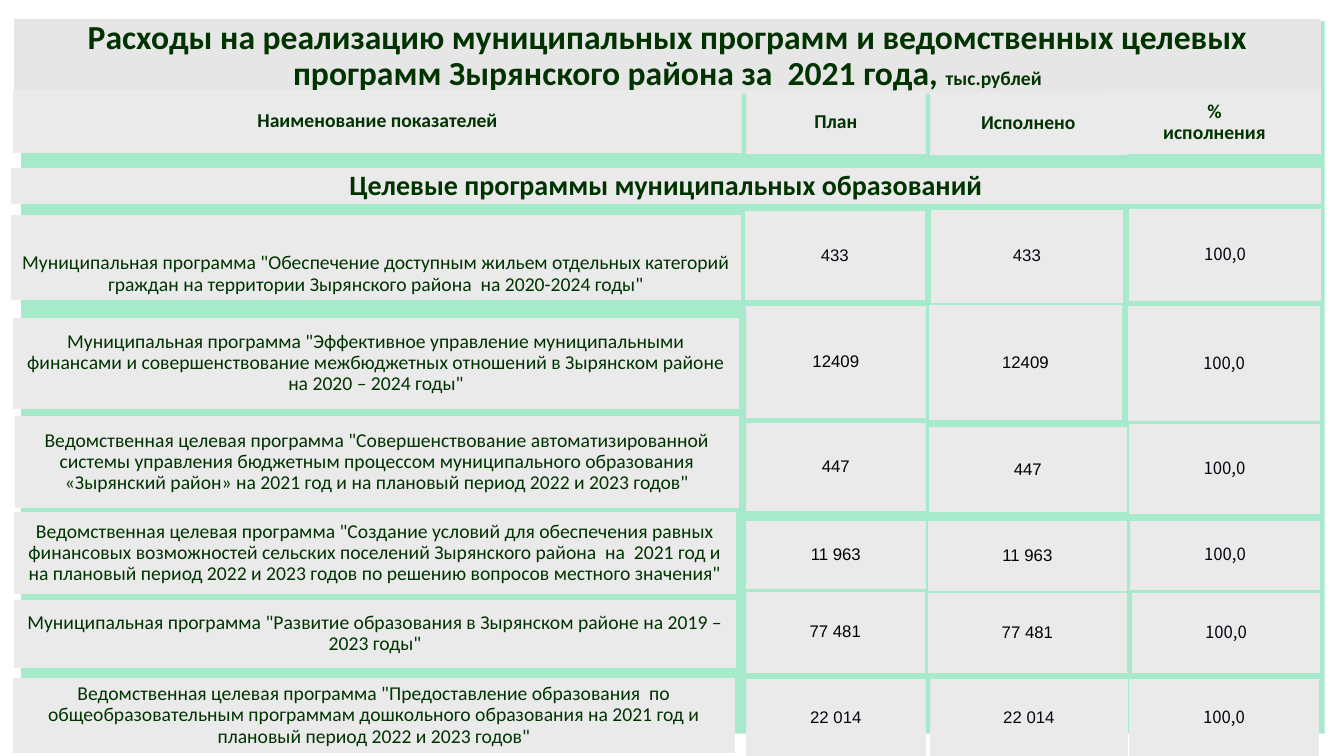
from pptx import Presentation
from pptx.dml.color import RGBColor
from pptx.enum.shapes import MSO_SHAPE as Shape
from pptx.enum.text import MSO_ANCHOR as Anchor, PP_ALIGN as Align
from pptx.util import Inches, Pt

GREEN, INK, BLACK = "003300", "060612", "000000"
PANEL, TITLE_PANEL, BACKDROP = "EAEAEA", "E7E6E6", "A7EACB"
PERCENT = "100,0"

# Column headings: text and box (left, offset from the header top, width, height)
HEADINGS = [
    (["Наименование показателей"], (0.13, 0, 7.23, 0.63)),
    (["План"], (7.4, 0.01, 1.78, 0.63)),
    (["Исполнено"], (9.22, 0.02, 1.96, 0.63)),
    (["%", "исполнения"], (10.99, 0.01, 2.11, 0.63)),
]

# Programs: row top, name, amount (plan and actual agree), amount colour,
# then the boxes of name, plan, actual and percent, offset from the row top
PROGRAMS = [
    (2.07, 'Муниципальная программа "Обеспечение доступным жильем отдельных категорий '
     'граждан на территории Зырянского района  на 2020-2024 годы"', "433", INK,
     [(0.11, 0.06, 7.24, 0.85), (7.39, 0.02, 1.78, 0.89),
      (9.23, 0.01, 1.91, 0.93), (11.2, 0, 1.9, 0.92)]),
    (3.03, 'Муниципальная программа "Эффективное управление муниципальными финансами '
     'и совершенствование межбюджетных отношений в Зырянском районе '
     'на 2020 – 2024 годы"', "12409", BLACK,
     [(0.13, 0.12, 7.2, 0.91), (7.4, 0.01, 1.78, 1.11),
      (9.21, 0, 1.92, 1.14), (11.19, 0.01, 1.9, 1.14)]),
    (4.13, 'Ведомственная целевая программа "Совершенствование автоматизированной '
     'системы управления бюджетным процессом муниципального образования '
     '«Зырянский район» на 2021 год и на плановый период 2022 и 2023 годов"',
     "447", BLACK,
     [(0.15, 0, 7.18, 0.91), (7.4, 0.07, 1.78, 0.87),
      (9.21, 0.11, 1.97, 0.84), (11.2, 0.08, 1.89, 0.89)]),
    (5.08, 'Ведомственная целевая программа "Создание условий для обеспечения равных '
     'финансовых возможностей сельских поселений Зырянского района  на  2021 год и '
     'на плановый период 2022 и 2023 годов по решению вопросов местного значения"',
     "11 963", BLACK,
     [(0.14, 0, 7.16, 0.81), (7.4, 0.09, 1.78, 0.67),
      (9.2, 0.09, 1.98, 0.69), (11.21, 0.09, 1.88, 0.68)]),
    (5.87, 'Муниципальная программа "Развитие образования в Зырянском районе '
     'на 2019 – 2023 годы"', "77 481", BLACK,
     [(0.14, 0.08, 7.16, 0.68), (7.4, 0, 1.77, 0.81),
      (9.2, 0.01, 1.98, 0.8), (11.23, 0.01, 1.86, 0.8)]),
    (6.73, 'Ведомственная целевая программа "Предоставление образования  по '
     'общеобразовательным программам дошкольного образования на 2021 год и '
     'плановый период 2022 и 2023 годов"', "22 014", INK,
     [(0.13, 0, 7.16, 0.74), (7.4, 0.01, 1.78, 0.76),
      (9.22, 0.01, 1.97, 0.76), (11.2, 0.01, 1.88, 0.76)]),
]


def rgb(color):
    return RGBColor.from_string(color)


def add_panel(slide, box, fill=PANEL, kind=Shape.ACTION_BUTTON_CUSTOM):
    panel = slide.shapes.add_shape(kind, *map(Inches, box))
    panel.shadow.inherit = False
    panel.fill.solid()
    panel.fill.fore_color.rgb = rgb(fill)
    panel.line.fill.background()
    return panel


def add_run(paragraph, text, size=14, font="Calibri", color=GREEN, bold=False):
    run = paragraph.add_run()
    run.text = text
    run.font.size = Pt(size)
    run.font.name = font
    run.font.bold = bold
    run.font.color.rgb = rgb(color)


def write(panel, lines, wrap=False, anchor=Anchor.MIDDLE, **style):
    """Fill the panel with centred lines and return the last paragraph."""
    frame = panel.text_frame
    frame.word_wrap = wrap
    frame.vertical_anchor = anchor
    for index, line in enumerate(lines):
        paragraph = frame.add_paragraph() if index else frame.paragraphs[0]
        paragraph.alignment = Align.CENTER
        paragraph.line_spacing = 0.9
        add_run(paragraph, line, **style)
    return paragraph


def add_title(slide, box):
    title = write(
        add_panel(slide, box, TITLE_PANEL),
        ["Расходы на реализацию муниципальных программ и ведомственных целевых "
         "программ Зырянского района за  2021 года, "],
        wrap=True, size=24, bold=True)
    add_run(title, "тыс.рублей", bold=True)


def add_header(slide, top):
    for lines, (left, offset, width, height) in HEADINGS:
        panel = add_panel(slide, (left, top + offset, width, height))
        write(panel, lines, bold=True)


def add_program(slide, top, name, amount, amount_color, boxes, name_anchor):
    name_panel, plan, actual, percent = [
        add_panel(slide, (left, top + offset, width, height))
        for left, offset, width, height in boxes]
    write(name_panel, [name], wrap=True, anchor=name_anchor)
    for amount_panel in (plan, actual):
        write(amount_panel, [amount], size=12, font="Arial", color=amount_color)
    write(percent, [PERCENT], size=12, font="Noto Sans CJK SC", color=INK)


def main():
    deck = Presentation()
    deck.slide_width, deck.slide_height = Inches(13.33), Inches(7.5)
    slide = deck.slides.add_slide(deck.slide_layouts[6])

    add_panel(slide, (0.21, 0.21, 12.93, 7.07), BACKDROP, Shape.RECTANGLE)
    add_title(slide, (0.14, 0.19, 12.96, 0.74))
    section = add_panel(slide, (0.11, 1.67, 12.99, 0.35))
    write(section, ["Целевые программы муниципальных образований"], size=20, bold=True)
    for index, program in enumerate(PROGRAMS):
        name_anchor = Anchor.MIDDLE if index else Anchor.BOTTOM
        add_program(slide, *program, name_anchor)
    add_header(slide, 0.89)

    deck.save("out.pptx")


if __name__ == "__main__":
    main()
